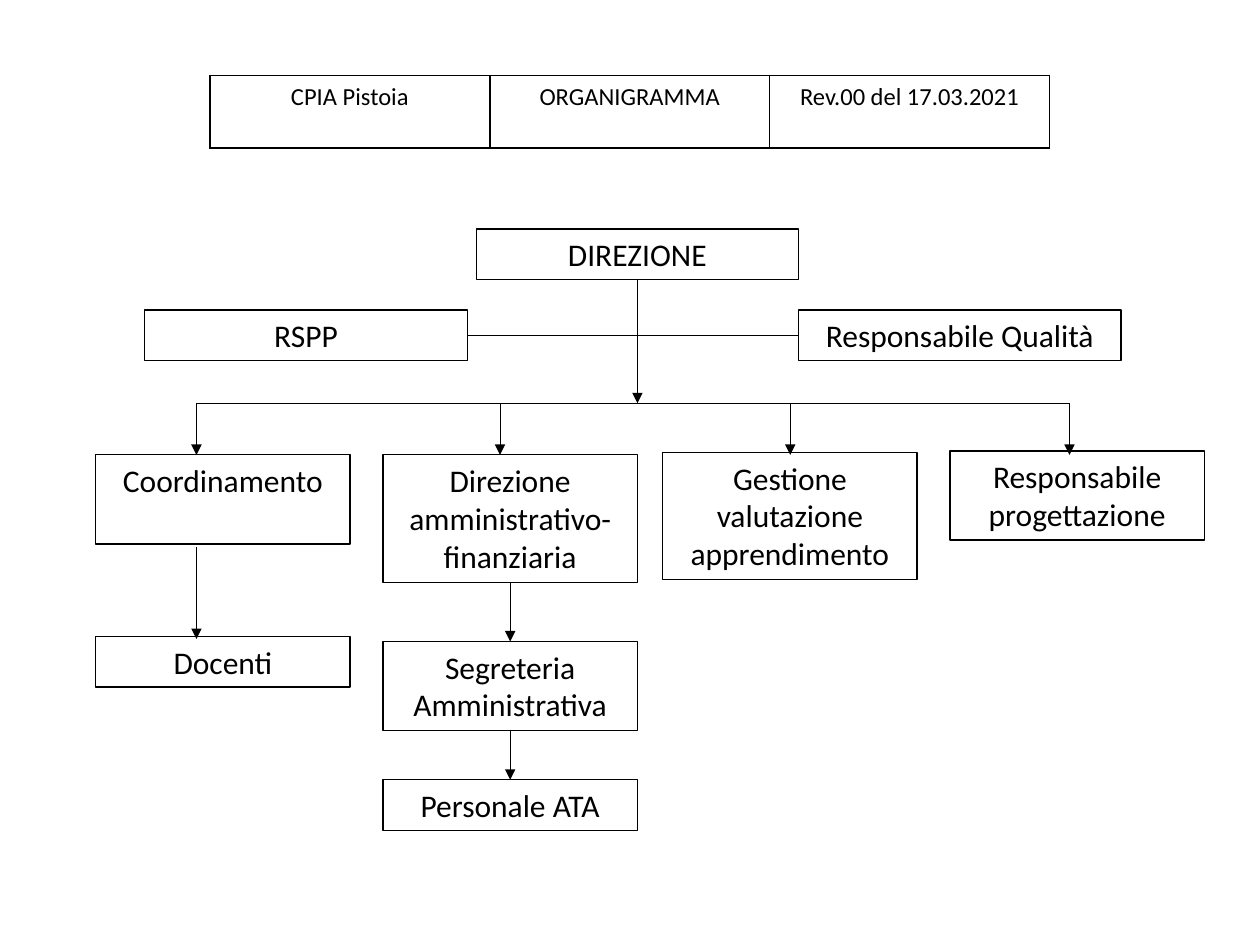
"""Builds the organisation chart slide of CPIA Pistoia."""
from lxml.etree import SubElement
from pptx import Presentation
from pptx.dml.color import RGBColor
from pptx.enum.shapes import MSO_CONNECTOR as CONN, MSO_SHAPE as SHAPE
from pptx.enum.text import MSO_ANCHOR as ANCHOR, MSO_AUTO_SIZE as AUTO, PP_ALIGN as ALIGN
from pptx.oxml import parse_xml
from pptx.oxml.ns import nsdecls, qn
from pptx.util import Cm, Pt

BLACK = RGBColor(0, 0, 0)
FONT = "Calibri"
WIDE, NARROW = 6.5, 5.13
ONE_LINE, TWO_LINES, THREE_LINES = 1.02, 1.8, 2.57
TOP, LEFT, BOTTOM, RIGHT = 0, 1, 2, 3


class Chart:
    def __init__(self, slide):
        self.s = slide

    def style(self, tf, size):
        for p in tf.paragraphs:
            p.alignment = ALIGN.CENTER
            for r in p.runs:
                r.font.name = FONT
                r.font.size = Pt(size)
                r.font.color.rgb = BLACK

    def table(self, x, y, w, h, texts):
        tbl = self.s.shapes.add_table(1, len(texts), Cm(x), Cm(y), Cm(w), Cm(h)).table
        tbl.first_row = tbl.horz_banding = False
        for cell, text in zip(tbl.rows[0].cells, texts):
            cell.text_frame.text = text
            self.style(cell.text_frame, 14)
            tc_pr = cell._tc.get_or_add_tcPr()
            for side in ("lnL", "lnR", "lnT", "lnB"):
                tc_pr.append(parse_xml(
                    f'<a:{side} {nsdecls("a")} w="{Pt(1)}"><a:solidFill>'
                    f'<a:srgbClr val="{BLACK}"/></a:solidFill></a:{side}>'))
            cell.fill.background()

    def box(self, text, x, y, w, h, auto=AUTO.SHAPE_TO_FIT_TEXT):
        sp = self.s.shapes.add_shape(SHAPE.RECTANGLE, Cm(x), Cm(y), Cm(w), Cm(h))
        sp.shadow.inherit = False
        sp.fill.background()
        sp.line.color.rgb = BLACK
        sp.line.width = Pt(0.75)
        tf = sp.text_frame
        tf.text = text
        tf.word_wrap = True
        tf.auto_size = auto
        tf.vertical_anchor = ANCHOR.TOP
        self.style(tf, 18)
        return sp

    def line(self, x1, y1, x2, y2, arrow=False):
        cxn = self.s.shapes.add_connector(CONN.STRAIGHT, Cm(x1), Cm(y1), Cm(x2), Cm(y2))
        cxn.line.color.rgb = BLACK
        cxn.line.width = Pt(0.5)
        if arrow:
            SubElement(cxn.line._get_or_add_ln(), qn("a:tailEnd"), type="triangle")
        SubElement(cxn._element.spPr, qn("a:effectLst"))
        return cxn

    def join(self, a, a_side, b, b_side, arrow=False):
        cxn = self.line(0, 0, 1, 1, arrow)
        cxn.begin_connect(a, a_side)
        cxn.end_connect(b, b_side)


def main():
    prs = Presentation()
    prs.slide_width, prs.slide_height = Cm(25.4), Cm(19.05)
    chart = Chart(prs.slides.add_slide(prs.slide_layouts[6]))

    chart.table(4.23, 1.52, 16.93, 1.46,
                ["CPIA Pistoia", "ORGANIGRAMMA", "Rev.00 del 17.03.2021"])

    head = chart.box("DIREZIONE", 9.6, 4.62, WIDE, ONE_LINE)
    safety = chart.box("RSPP", 2.92, 6.25, WIDE, ONE_LINE)
    quality = chart.box("Responsabile Qualità", 16.1, 6.25, WIDE, ONE_LINE)

    col1, col2, col3, col4 = 1.93, 7.72, 13.36, 19.15
    chart.box("Coordinamento", col1, 9.17, NARROW, TWO_LINES, AUTO.NONE)
    admin = chart.box("Direzione amministrativo-finanziaria", col2, 9.17, NARROW, THREE_LINES)
    chart.box("Gestione valutazione apprendimento", col3, 9.12, NARROW, THREE_LINES)
    office = chart.box("Segreteria Amministrativa", col2, 12.93, NARROW, TWO_LINES)
    chart.box("Responsabile progettazione", col4, 9.09, NARROW, TWO_LINES)
    chart.box("Docenti", col1, 12.83, NARROW, ONE_LINE)
    staff = chart.box("Personale ATA", col2, 15.72, NARROW, ONE_LINE)

    bus_y, drops = 8.13, [3.96, 10.08, 15.93, 21.56]
    trunk = chart.line(12.85, 5.64, 12.85, bus_y, arrow=True)
    trunk.begin_connect(head, BOTTOM)
    chart.join(safety, RIGHT, quality, LEFT)
    chart.line(drops[0], bus_y, drops[-1], bus_y)
    for x in drops:
        chart.line(x, bus_y, x, 9.17, arrow=True)
    chart.line(drops[0], 11.02, drops[0], 12.88, arrow=True)
    chart.join(admin, BOTTOM, office, TOP, arrow=True)
    chart.join(office, BOTTOM, staff, TOP, arrow=True)

    prs.save("out.pptx")


if __name__ == "__main__":
    main()
